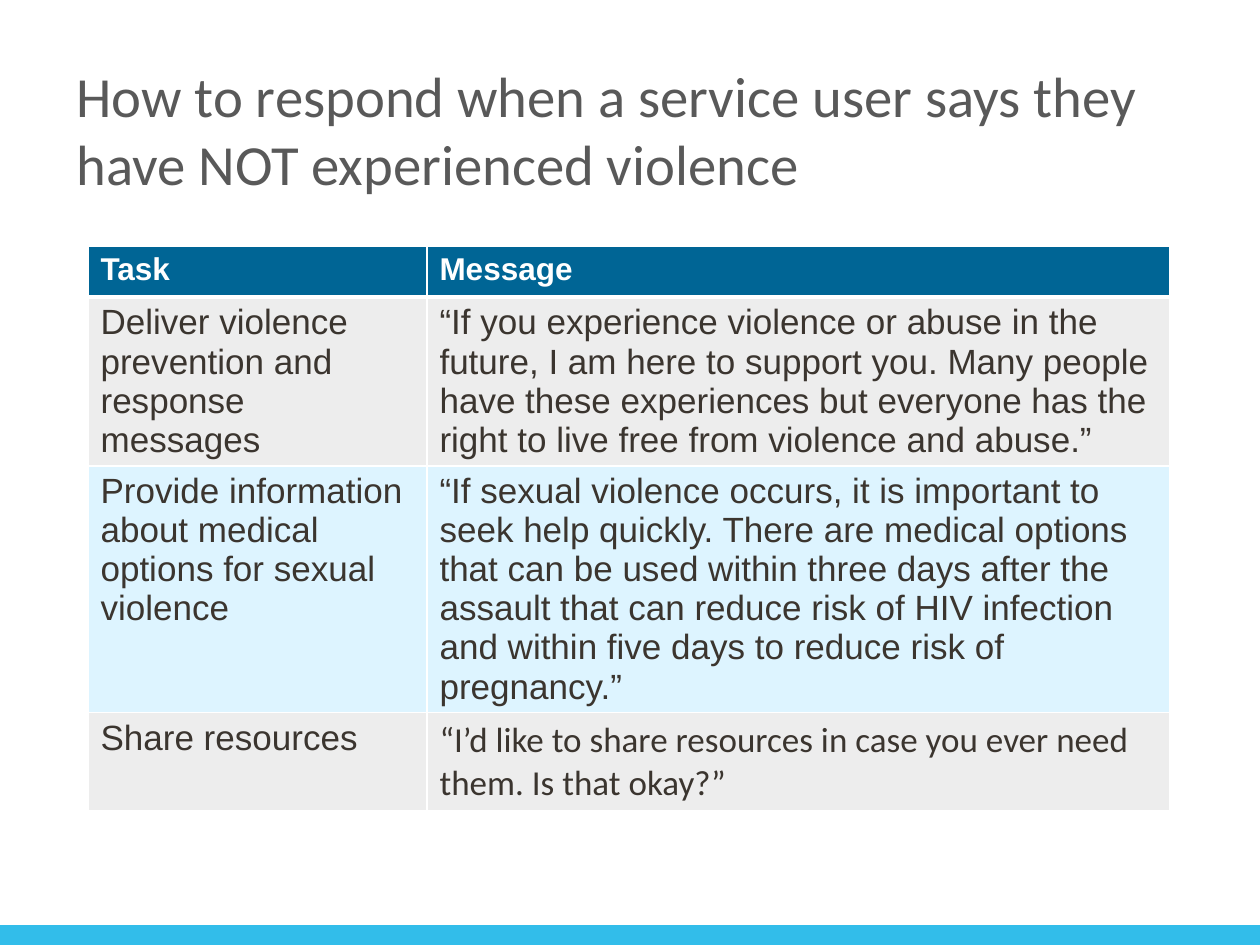
"""Build a slide on responding to service users who have not experienced violence."""
from lxml import etree
from pptx import Presentation, util as u
from pptx.dml.color import RGBColor
from pptx.enum import shapes, text
from pptx.oxml.ns import qn

COLORS = {"title": "595959", "body": "3B352F", "white": "FFFFFF", "header": "006595",
          "gray": "EDEDED", "pale": "DDF4FF", "bar": "32BDEA"}


def px(n):
    return u.Emu(round(n * 914400 / 126))


def put_text(tf, words, size=20, font="Arial", color="body", bold=False):
    tf.word_wrap = True
    p = tf.paragraphs[0]
    p.alignment = text.PP_ALIGN.LEFT
    r = p.add_run()
    r.text = words
    r.font.size, r.font.name, r.font.bold = u.Pt(size), font, bold
    r.font.color.rgb = RGBColor.from_string(COLORS[color])


prs = Presentation()
prs.slide_width, prs.slide_height = px(1260), px(945)
s = prs.slides.add_slide(prs.slide_layouts[5])

bar = s.shapes.add_shape(shapes.MSO_SHAPE.RECTANGLE, px(0), px(925), px(1260), px(20))
bar.shadow.inherit = False
bar.fill.solid()
bar.fill.fore_color.rgb = RGBColor.from_string(COLORS["bar"])
bar.line.fill.background()

title = s.shapes.title
title.left, title.top, title.width, title.height = px(64), px(62), px(1133), px(134)
tf = title.text_frame
tf.auto_size = text.MSO_AUTO_SIZE.NONE
tf.vertical_anchor = text.MSO_ANCHOR.MIDDLE
put_text(tf, "How to respond when a service user says they have NOT experienced violence",
         size=32.4, font="Calibri", color="title")

header = {"size": 18, "color": "white", "bold": True}
rows = [
    (51, "header", ("Task", header), ("Message", header)),
    (168, "gray", ("Deliver violence prevention and response messages", {}),
     ("“If you experience violence or abuse in the future, I am here to support you. "
      "Many people have these experiences but everyone has the right to live free "
      "from violence and abuse.”", {})),
    (246, "pale", ("Provide information about medical options for sexual violence", {}),
     ("“If sexual violence occurs, it is important to seek help quickly. There are "
      "medical options that can be used within three days after the assault that can "
      "reduce risk of HIV infection and within five days to reduce risk of "
      "pregnancy.”", {})),
    (97, "gray", ("Share resources", {}),
     ("“I’d like to share resources in case you ever need them. Is that okay?”",
      {"font": "Calibri"})),
]
widths = [339, 743]
table = s.shapes.add_table(len(rows), len(widths), px(88), px(246),
                           px(sum(widths)), px(sum(row[0] for row in rows))).table
for column, width in zip(table.columns, widths):
    column.width = px(width)

for i, (height, fill, *cells) in enumerate(rows):
    table.rows[i].height = px(height)
    for j, (words, style) in enumerate(cells):
        cell = table.cell(i, j)
        put_text(cell.text_frame, words, **style)
        tcPr = cell._tc.get_or_add_tcPr()
        for side in "LRTB":
            thick = (i, side) in ((0, "B"), (1, "T"))
            ln = etree.SubElement(tcPr, qn(f"a:ln{side}"), w=str(u.Pt(3 if thick else 1)))
            solid = etree.SubElement(ln, qn("a:solidFill"))
            etree.SubElement(solid, qn("a:srgbClr"), val=COLORS["white"])
        cell.fill.solid()
        cell.fill.fore_color.rgb = RGBColor.from_string(COLORS[fill])

prs.save("out.pptx")
